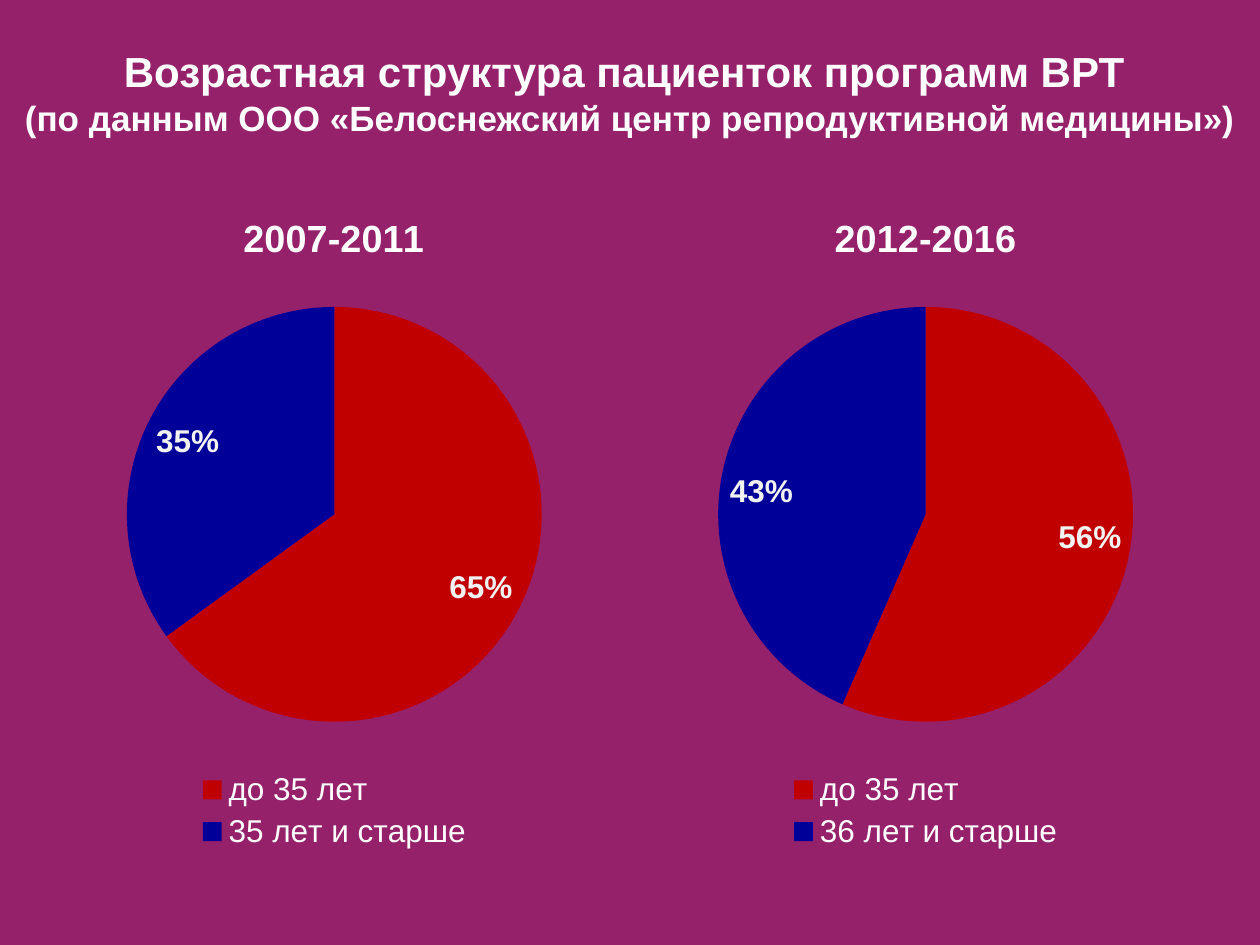
from lxml import etree
from pptx import Presentation
from pptx.chart.data import CategoryChartData as Data
from pptx.dml.color import RGBColor as RGB
from pptx.enum.chart import XL_CHART_TYPE as Kind, XL_LABEL_POSITION as Spot
from pptx.enum.chart import XL_LEGEND_POSITION as Side
from pptx.enum.text import MSO_ANCHOR as Anchor, PP_ALIGN as Align
from pptx.oxml.ns import qn
from pptx.util import Cm, Pt

HUES = {"back": "96216B", "text": "FFFFFF", "label": "F2F2F2",
        "young": "C00000", "older": "000099"}
PIES = [
    (2.18, "2007-2011", ["до 35 лет", "35 лет и старше"], [0.65, 0.35]),
    (14.1, "2012-2016", ["до 35 лет", "36 лет и старше"], [0.56, 0.43]),
]
PLOT = {"x": 0.04, "y": 0.18, "w": 0.92, "h": 0.62}


def style(font, size, hue, bold=True):
    font.name = "Arial"
    font.size = Pt(size)
    font.bold = bold
    font.color.rgb = RGB.from_string(HUES[hue])


def place(chart):
    """Fix the inner plot area at the fractions in PLOT."""
    area = chart._chartSpace.chart.plotArea
    for old in area.findall(qn("c:layout")):
        area.remove(old)
    layout = etree.Element(qn("c:layout"))
    area.insert(0, layout)
    manual = etree.SubElement(layout, qn("c:manualLayout"))
    parts = [("layoutTarget", "inner"), ("xMode", "edge"), ("yMode", "edge")]
    for tag, val in parts + list(PLOT.items()):
        etree.SubElement(manual, qn("c:" + tag)).set("val", str(val))


deck = Presentation()
deck.slide_width, deck.slide_height = Cm(25.4), Cm(19.05)
slide = deck.slides.add_slide(deck.slide_layouts[6])
slide.background.fill.solid()
slide.background.fill.fore_color.rgb = RGB.from_string(HUES["back"])

# Heading
box = slide.shapes.add_textbox(Cm(0), Cm(0.58), Cm(25.4), Cm(2.21))
frame = box.text_frame
frame.word_wrap = True
frame.vertical_anchor = Anchor.BOTTOM
frame.margin_left = frame.margin_right = frame.margin_bottom = Cm(0)
para = frame.paragraphs[0]
para.alignment = Align.CENTER
run = para.add_run()
run.text = "Возрастная структура пациенток программ ВРТ "
style(run.font, 24, "text")
para.add_line_break()
run = para.add_run()
run.text = "(по данным ООО «Белоснежский центр репродуктивной медицины»)"
style(run.font, 20, "text")

# One pie per period
for left, name, cats, vals in PIES:
    data = Data(number_format="0%")
    data.categories = cats
    data.add_series(name, vals)
    chart = slide.shapes.add_chart(
        Kind.PIE, Cm(left), Cm(3.76), Cm(9.12), Cm(13.49), data).chart
    chart.font.name = "Vollkorn"
    chart.font.size = Pt(18)
    place(chart)

    chart.has_title = True
    run = chart.chart_title.text_frame.paragraphs[0].add_run()
    run.text = name
    style(run.font, 21.6, "text")

    chart.has_legend = True
    chart.legend.position = Side.BOTTOM
    chart.legend.include_in_layout = False
    style(chart.legend.font, 18, "text", bold=False)

    plot = chart.plots[0]
    plot.vary_by_categories = True
    for i, hue in enumerate(["young", "older"]):
        fill = plot.series[0].points[i].format.fill
        fill.solid()
        fill.fore_color.rgb = RGB.from_string(HUES[hue])

    plot.has_data_labels = True
    labels = plot.data_labels
    labels.show_value = True
    labels.show_percentage = False
    labels.number_format = "0%"
    labels.number_format_is_linked = False
    labels.position = Spot.INSIDE_END
    style(labels.font, 18, "label")

deck.save("out.pptx")
